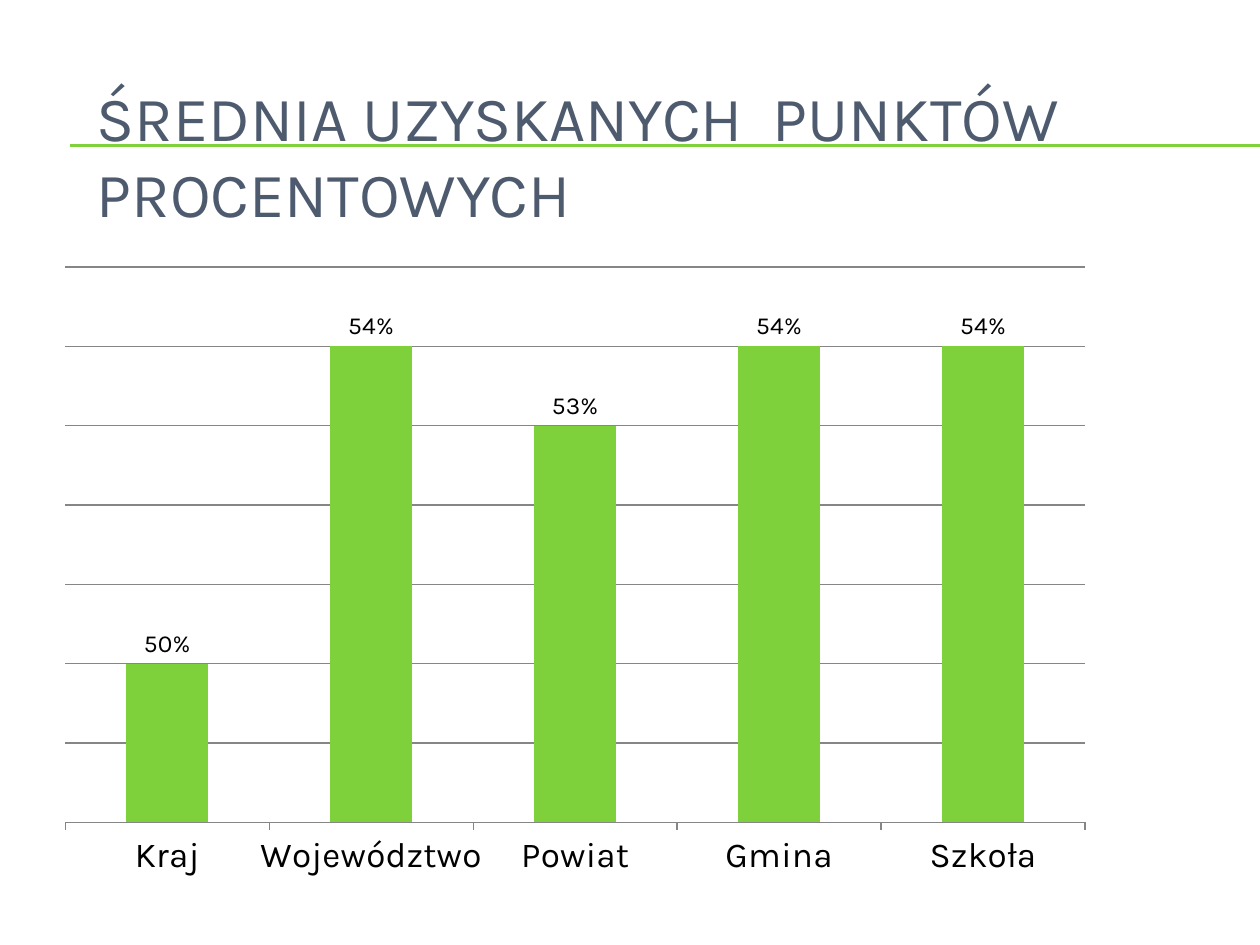
"""Build a slide with a column chart of average percentage scores."""
from lxml import etree
from pptx import Presentation
from pptx.chart.data import CategoryChartData
from pptx.dml.color import RGBColor
from pptx.enum import chart as ch, shapes, text
from pptx.oxml import ns
from pptx.util import Pt

TITLE = "ŚREDNIA UZYSKANYCH  PUNKTÓW PROCENTOWYCH"
SCORES = {"Kraj": 0.5, "Województwo": 0.54, "Powiat": 0.53, "Gmina": 0.54, "Szkoła": 0.54}
RULES = [82.8, 83.5]
FONT = "Karla"
GREEN = RGBColor(0x7F, 0xD1, 0x3B)
SLATE = RGBColor(0x4E, 0x5B, 0x6F)
GRAY = RGBColor(0x86, 0x86, 0x86)
BLACK = RGBColor(0, 0, 0)
WIDTH, HEIGHT = 720, 540


def style(font, size, color):
    font.name, font.size = FONT, Pt(size)
    font.color.rgb = color


def add_rule(slide, y):
    rule = slide.shapes.add_connector(
        shapes.MSO_CONNECTOR.STRAIGHT, Pt(40.3), Pt(y), Pt(WIDTH), Pt(y))
    rule.line.color.rgb = GREEN
    rule.line.width = Pt(0.75)
    etree.SubElement(rule.element.spPr, ns.qn("a:effectLst"))


def add_title(slide):
    frame = slide.shapes.add_textbox(Pt(48.2), Pt(43.2), Pt(588.2), Pt(90)).text_frame
    frame.word_wrap = True
    frame.vertical_anchor = text.MSO_ANCHOR.MIDDLE
    run = frame.paragraphs[0].add_run()
    run.text = TITLE
    style(run.font, 36, SLATE)


def add_scores(slide):
    data = CategoryChartData(number_format="0%")
    data.categories = list(SCORES)
    data.add_series("Series 1", list(SCORES.values()))
    chart = slide.shapes.add_chart(
        ch.XL_CHART_TYPE.COLUMN_CLUSTERED, Pt(25.2), Pt(145.4), Pt(607), Pt(362.9), data).chart
    chart.has_legend = chart.has_title = False
    style(chart.font, 10, BLACK)

    cats = chart.category_axis
    cats.major_tick_mark = ch.XL_TICK_MARK.OUTSIDE
    cats.format.line.color.rgb = GRAY
    style(cats.tick_labels.font, 20, BLACK)

    vals = chart.value_axis
    vals.visible = False
    vals.minimum_scale, vals.maximum_scale, vals.major_unit = 0.48, 0.55, 0.01
    vals.has_major_gridlines = True
    vals.major_gridlines.format.line.color.rgb = GRAY
    vals.tick_labels.number_format = "0%"
    vals.tick_labels.number_format_is_linked = False

    plot = chart.plots[0]
    plot.gap_width = 150
    plot.vary_by_categories = False
    bars = plot.series[0]
    bars.format.fill.solid()
    bars.format.fill.fore_color.rgb = GREEN
    labels = bars.data_labels
    labels.show_value = True
    labels.number_format = "0%"
    labels.number_format_is_linked = False
    labels.position = ch.XL_LABEL_POSITION.OUTSIDE_END
    style(labels.font, 14, BLACK)


def main():
    deck = Presentation()
    deck.slide_width, deck.slide_height = Pt(WIDTH), Pt(HEIGHT)
    slide = deck.slides.add_slide(deck.slide_layouts[6])
    for y in RULES:
        add_rule(slide, y)
    add_title(slide)
    add_scores(slide)
    deck.save("out.pptx")


if __name__ == "__main__":
    main()
